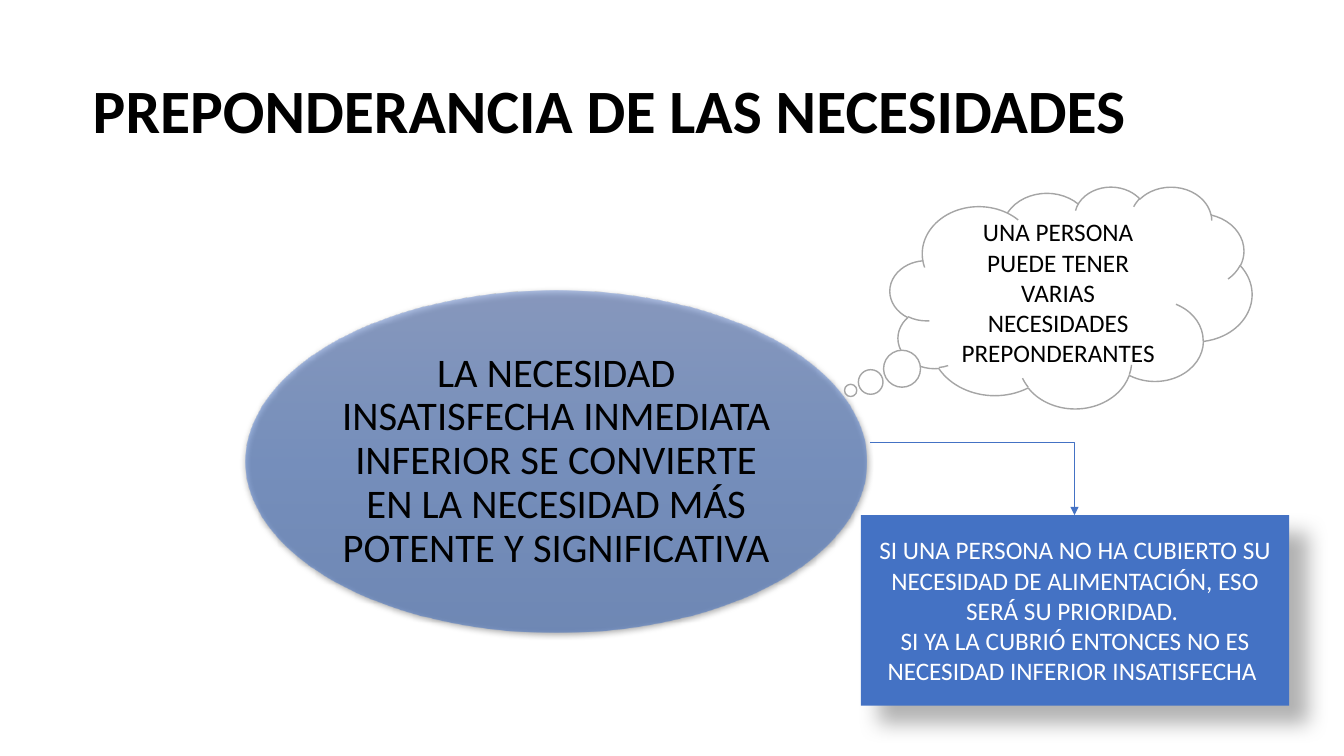
from lxml.etree import SubElement
from pptx import Presentation
from pptx.dml.color import RGBColor
from pptx.enum.shapes import MSO_CONNECTOR as LINK, MSO_SHAPE as FORM
from pptx.enum.text import MSO_ANCHOR as ANCHOR, PP_ALIGN as ALIGN
from pptx.oxml import parse_xml
from pptx.oxml.ns import nsdecls, qn
from pptx.util import Inches, Pt

BLACK = RGBColor(0x00, 0x00, 0x00)
WHITE = RGBColor(0xFF, 0xFF, 0xFF)
GRAY = RGBColor(0xA5, 0xA5, 0xA5)
BLUE = RGBColor(0x44, 0x72, 0xC4)
TINTS = [(0, RGBColor(0x61, 0x83, 0xCB)),
         (50, RGBColor(0x3E, 0x70, 0xCA)),
         (100, RGBColor(0x30, 0x62, 0xBB))]
CELL = Inches(0.1)


def grid(*cells):
    return [round(n * CELL) for n in cells]


def write(shape, lines, size, color, align=ALIGN.CENTER, space=None, inset=None, bold=False):
    frame = shape.text_frame
    frame.word_wrap = True
    frame.vertical_anchor = ANCHOR.MIDDLE
    if inset is not None:
        frame.margin_left = frame.margin_right = inset
        frame.margin_top = frame.margin_bottom = inset
    for i, line in enumerate(lines):
        para = frame.add_paragraph() if i else frame.paragraphs[0]
        para.alignment = align
        para.line_spacing = space
        run = para.add_run()
        run.text = line
        font = run.font
        font.name, font.size, font.bold = "Calibri", Pt(size), bold
        font.color.rgb = color


deck = Presentation()
deck.slide_width, deck.slide_height = Inches(13.333), Inches(7.5)
slide = deck.slides.add_slide(deck.slide_layouts[5])
shapes = slide.shapes

title = shapes.title
title.left, title.top, title.width, title.height = grid(9.2, 4, 115, 14.5)
write(title, ["PREPONDERANCIA DE LAS NECESIDADES"], 44, BLACK, ALIGN.LEFT, 0.9, 0, True)

oval = shapes.add_shape(FORM.OVAL, *grid(24.4, 28.8, 61.6, 33.9))
oval.line.fill.background()
stops = "".join(
    f'<a:gs pos="{at * 1000}"><a:srgbClr val="{tint}"><a:alpha val="50000"/></a:srgbClr></a:gs>'
    for at, tint in TINTS)
fade = parse_xml(f'<a:gradFill {nsdecls("a")} rotWithShape="1"><a:gsLst>{stops}</a:gsLst>'
                 '<a:lin ang="5400000" scaled="0"/></a:gradFill>')
oval._element.spPr.find(qn("a:prstGeom")).addnext(fade)

need = shapes.add_textbox(*grid(33.4, 33.8, 43.6, 24))
write(need, ["LA NECESIDAD INSATISFECHA INMEDIATA INFERIOR SE CONVIERTE "
             "EN LA NECESIDAD MÁS POTENTE Y SIGNIFICATIVA"], 29, BLACK, space=0.9, inset=0)

cloud = shapes.add_shape(FORM.CLOUD_CALLOUT, *grid(88.3, 18.5, 35.9, 22))
cloud.adjustments[0], cloud.adjustments[1] = -0.609, 0.42
cloud.shadow.inherit = False
cloud.fill.solid()
cloud.fill.fore_color.rgb = WHITE
cloud.line.color.rgb = GRAY
cloud.line.width = Pt(1)
write(cloud, ["UNA PERSONA PUEDE TENER VARIAS NECESIDADES PREPONDERANTES"], 18, BLACK)

case = shapes.add_shape(FORM.RECTANGLE, *grid(85.4, 51.1, 42.5, 18.9))
case.fill.solid()
case.fill.fore_color.rgb = BLUE
case.line.fill.background()
write(case, ["SI UNA PERSONA NO HA CUBIERTO SU NECESIDAD DE ALIMENTACIÓN, ESO SERÁ SU PRIORIDAD. ",
             "SI YA LA CUBRIÓ ENTONCES NO ES NECESIDAD INFERIOR INSATISFECHA "], 18, WHITE)

for shape, alpha, blur, dist, turn in [(oval, 63, 4.5, 1.5, 90), (case, 30, 15, 18, 45)]:
    shape.shadow.inherit = False
    glow = SubElement(shape._element.spPr.find(qn("a:effectLst")), qn("a:outerShdw"),
                      blurRad=str(Pt(blur)), dist=str(Pt(dist)), dir=str(turn * 60000),
                      algn="tl" if shape is case else "ctr", rotWithShape="0")
    tone = SubElement(glow, qn("a:srgbClr"), val=str(BLACK))
    SubElement(tone, qn("a:alpha"), val=str(alpha * 1000))

arrow = shapes.add_connector(LINK.ELBOW, *grid(86.3, 43.9, 106.6, 51.1))
arrow.line.color.rgb = BLUE
arrow.line.width = Pt(0.5)
props = arrow._element.spPr
props.find(qn("a:prstGeom")).set("prst", "bentConnector2")
SubElement(props.find(qn("a:ln")), qn("a:tailEnd"), type="triangle")
SubElement(props, qn("a:effectLst"))

deck.save("out.pptx")
